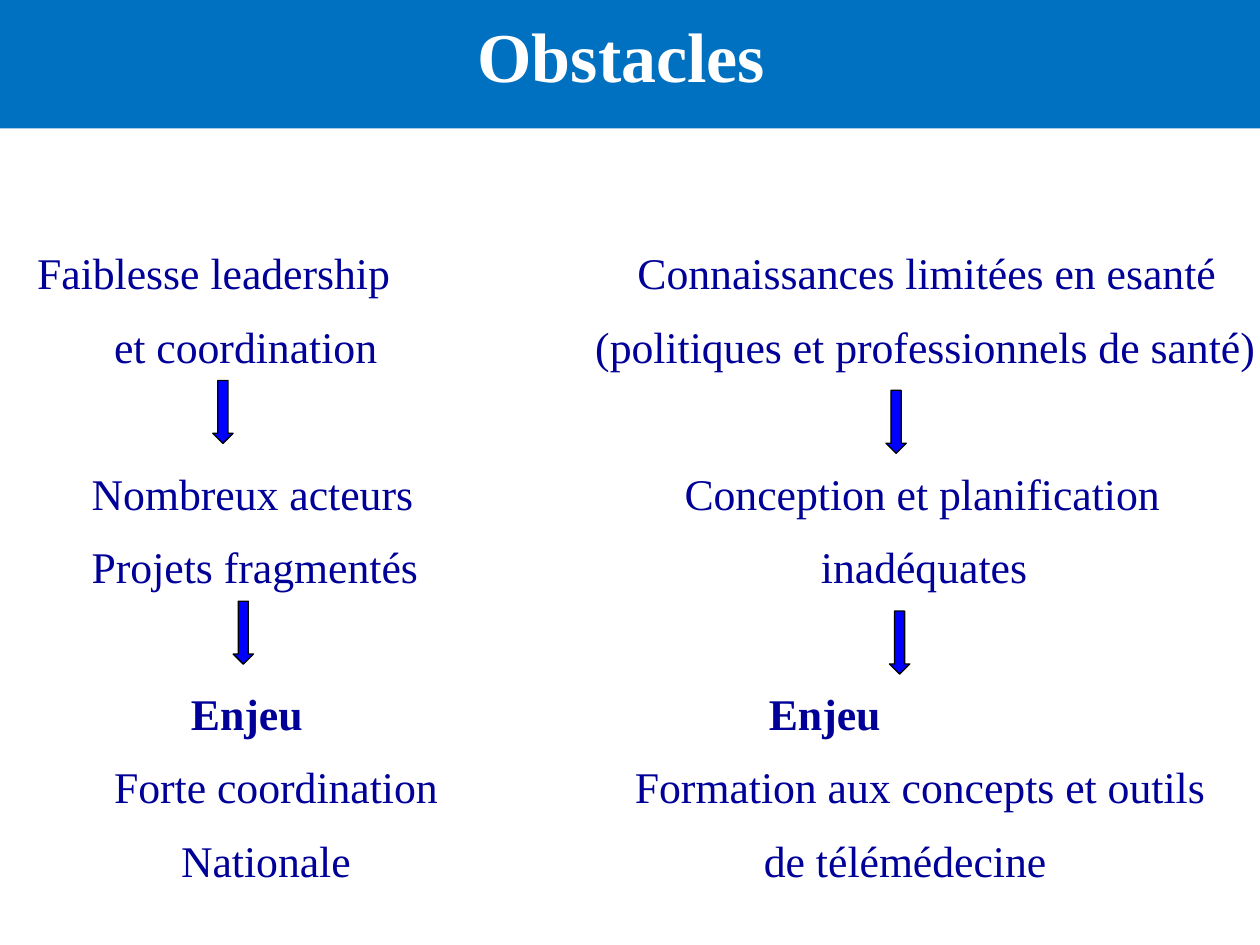
from pptx import Presentation
from pptx.dml.color import RGBColor
from pptx.enum.shapes import MSO_SHAPE
from pptx.enum.text import MSO_ANCHOR, PP_ALIGN
from pptx.util import Cm, Pt

BLUE = RGBColor(0x00, 0x70, 0xC0)
NAVY = RGBColor(0x00, 0x00, 0x99)
ARROW_BLUE = RGBColor(0x00, 0x00, 0xFF)
BLACK = RGBColor(0, 0, 0)
WHITE = RGBColor(255, 255, 255)
FONT = "Times New Roman"

TITLE = "Obstacles"
# Each column: left, width, blocks of (text, indent), arrows as (left, top), all in cm
COLUMNS = [
    {
        "left": 0.75, "width": 10,
        "blocks": [
            [("Faiblesse leadership", 0), ("et coordination", 1.55)],
            [("Nombreux acteurs", 1.1), ("Projets fragmentés", 1.1)],
            [("Enjeu", 3.1), ("Forte coordination", 1.55), ("Nationale", 2.9)],
        ],
        "arrows": [(4.29, 7.67), (4.7, 12.12)],
    },
    {
        "left": 12, "width": 13.4,
        "blocks": [
            [("Connaissances limitées en esanté", 0.85),
             ("(politiques et professionnels de santé)", 0)],
            [("Conception et planification", 1.8), ("inadéquates", 4.55)],
            [("Enjeu", 3.5), ("Formation aux concepts et outils", 0.8),
             ("de télémédecine", 3.4)],
        ],
        "arrows": [(17.86, 7.87), (17.93, 12.32)],
    },
]
TOP = 4.96
LINE_PITCH = 1.48
BLOCK_PITCH = 3 * LINE_PITCH  # two lines and a gap of one line
ARROW_W, ARROW_H = 0.41, 1.27


def write(p, text, size=25, color=NAVY, bold=False, align=PP_ALIGN.LEFT, indent=0):
    p.alignment = align
    if indent:
        p._p.get_or_add_pPr().set("marL", str(Cm(indent)))
    r = p.add_run()
    r.text = text
    r.font.name = FONT
    r.font.size = Pt(size)
    r.font.bold = bold
    r.font.color.rgb = color


def add_filled(slide, kind, left, top, width, height, fill):
    s = slide.shapes.add_shape(kind, Cm(left), Cm(top), Cm(width), Cm(height))
    s.shadow.inherit = False
    s.fill.solid()
    s.fill.fore_color.rgb = fill
    return s


def add_title(slide):
    s = add_filled(slide, MSO_SHAPE.RECTANGLE, 0, 0, 25.4, 2.59, BLUE)
    s.line.fill.background()
    tf = s.text_frame
    tf.vertical_anchor = MSO_ANCHOR.TOP
    tf.margin_top = Cm(0.25)
    tf.margin_right = Cm(0.6)
    write(tf.paragraphs[0], TITLE, size=40, color=WHITE, bold=True,
          align=PP_ALIGN.CENTER)


def add_block(slide, lines, left, top, width):
    sp = slide.shapes.add_textbox(Cm(left), Cm(top), Cm(width),
                                  Cm(len(lines) * LINE_PITCH))
    tf = sp.text_frame
    tf.word_wrap = True
    tf.margin_left = tf.margin_right = tf.margin_top = tf.margin_bottom = 0
    for i, (text, indent) in enumerate(lines):
        p = tf.add_paragraph() if i else tf.paragraphs[0]
        p.line_spacing = Pt(30)
        p.space_before = Pt(0)
        p.space_after = Pt(12)
        write(p, text, bold=text == "Enjeu", indent=indent)


def add_arrow(slide, left, top):
    s = add_filled(slide, MSO_SHAPE.DOWN_ARROW, left, top, ARROW_W, ARROW_H,
                   ARROW_BLUE)
    s.line.color.rgb = BLACK
    s.line.width = Pt(0.75)


def main():
    prs = Presentation()
    prs.slide_width, prs.slide_height = Cm(25.4), Cm(19.05)
    slide = prs.slides.add_slide(prs.slide_layouts[6])
    add_title(slide)
    for column in COLUMNS:
        for i, lines in enumerate(column["blocks"]):
            add_block(slide, lines, column["left"], TOP + i * BLOCK_PITCH,
                      column["width"])
        for left, top in column["arrows"]:
            add_arrow(slide, left, top)
    prs.save("out.pptx")


if __name__ == "__main__":
    main()
